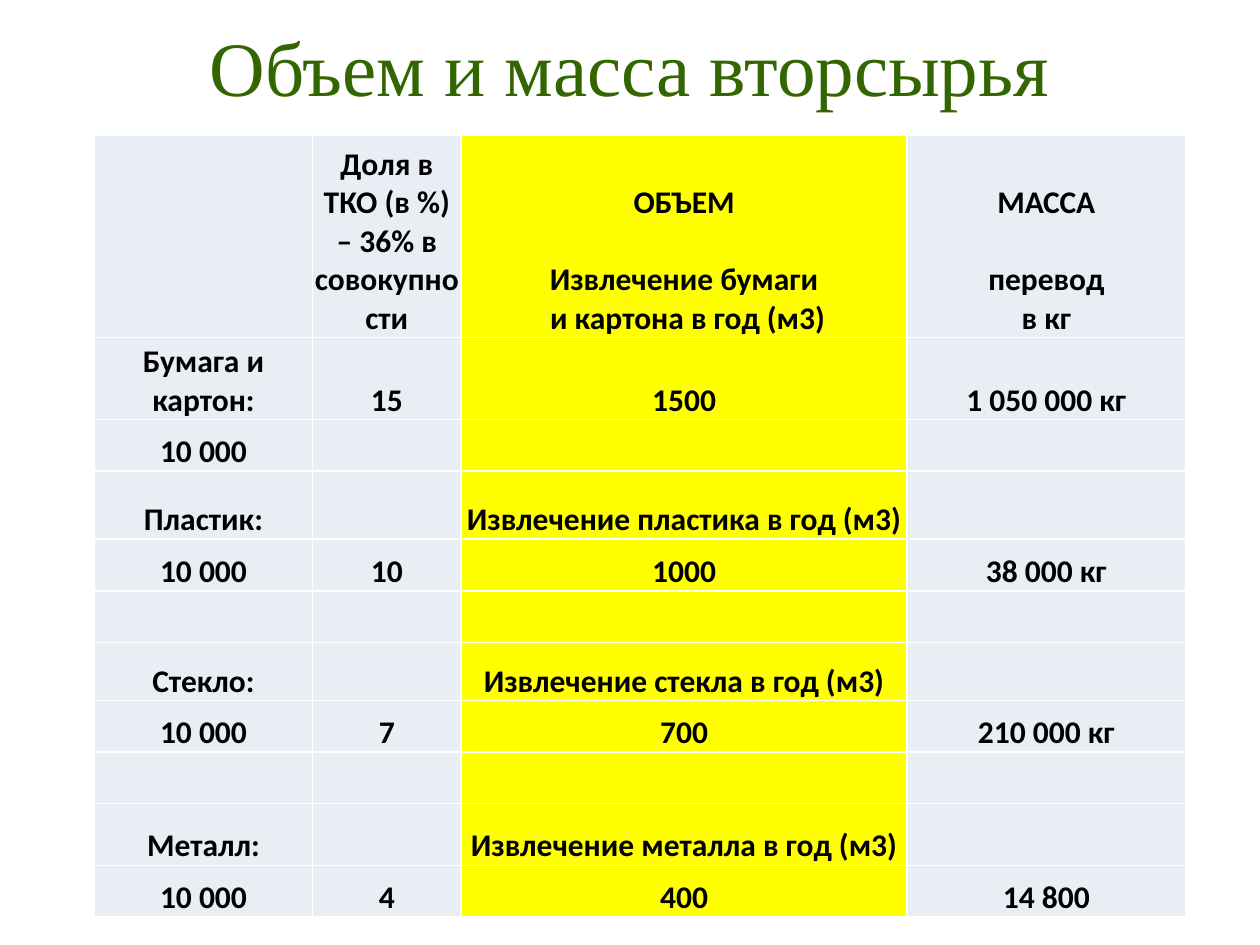
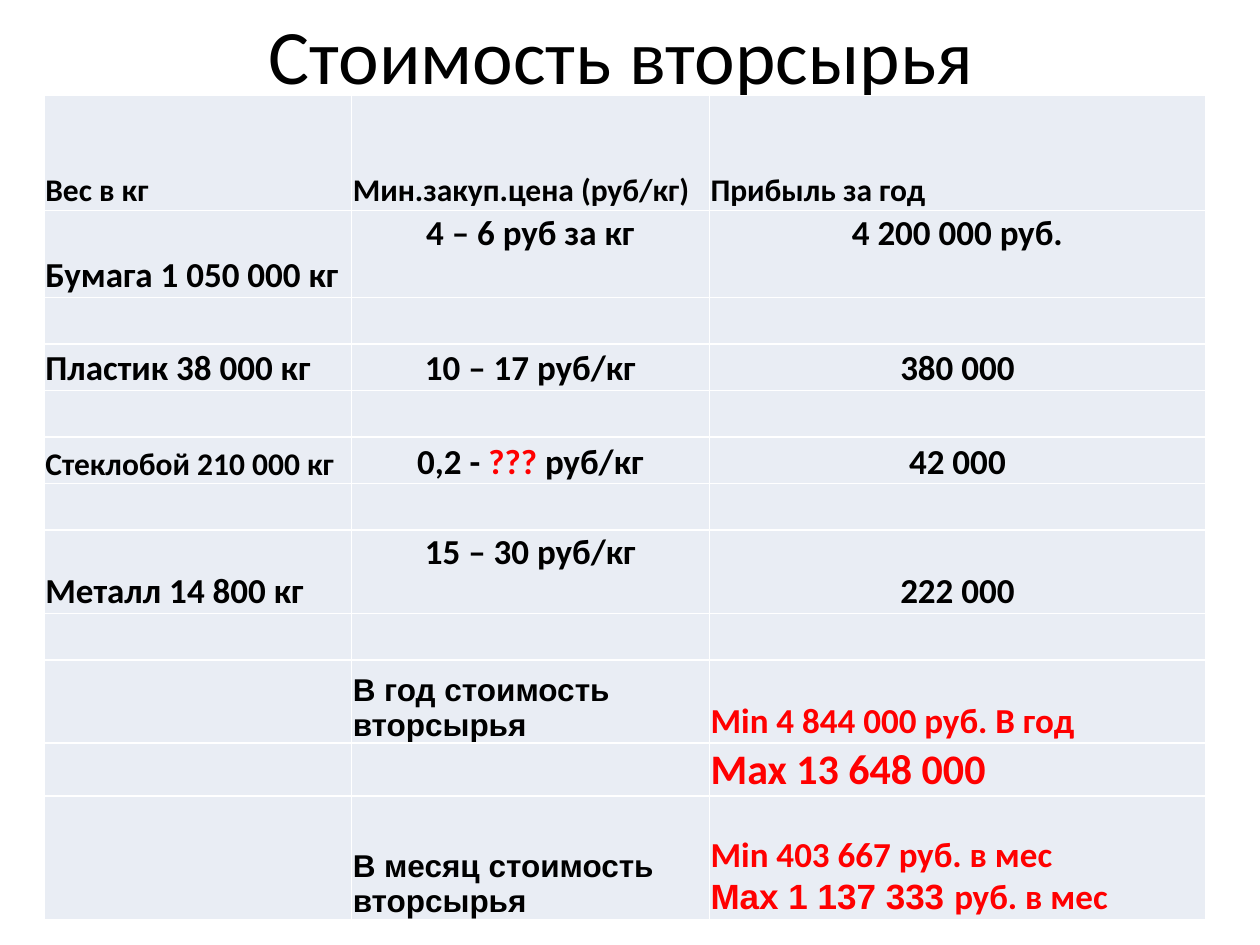
from collections import namedtuple

from pptx import Presentation
from pptx.dml.color import RGBColor
from pptx.enum.text import MSO_ANCHOR, MSO_AUTO_SIZE, PP_ALIGN
from pptx.util import Inches, Pt

BLACK = RGBColor(0x00, 0x00, 0x00)
RED = RGBColor(0xFF, 0x00, 0x00)
GREEN = RGBColor(0x33, 0x66, 0x00)
YELLOW = RGBColor(0xFF, 0xFF, 0x00)
PALE_BLUE = RGBColor(0xE9, 0xED, 0xF4)

Run = namedtuple("Run", "text size font color", defaults=(18, "Calibri", BLACK))


def add_titled_table(title_run, title_box, table_box, column_widths, row_heights):
    """Add a slide with a formatted title and an evenly filled table; return the table."""
    slide = presentation.slides.add_slide(presentation.slide_layouts[5])
    title = slide.shapes.title
    title.left, title.top, title.width, title.height = map(Inches, title_box)
    title.text_frame.word_wrap = True
    title.text_frame.auto_size = MSO_AUTO_SIZE.NONE
    title.text_frame.vertical_anchor = MSO_ANCHOR.MIDDLE
    write_runs(title.text_frame.paragraphs[0], [title_run], PP_ALIGN.CENTER, bold=False)

    table = slide.shapes.add_table(
        len(row_heights), len(column_widths), *map(Inches, table_box)
    ).table
    table.first_row = False
    table.horz_banding = False
    for column, width in zip(table.columns, column_widths):
        column.width = Inches(width)
    for row, height in zip(table.rows, row_heights):
        row.height = Inches(height)
    for cell in table.iter_cells():
        cell.fill.solid()
        cell.fill.fore_color.rgb = PALE_BLUE
        cell.vertical_anchor = MSO_ANCHOR.BOTTOM
        cell.margin_left = cell.margin_top = cell.margin_right = Inches(0.01)
        cell.margin_bottom = 0
    return table


def write_runs(paragraph, runs, alignment, bold=True):
    paragraph.alignment = alignment
    for item in runs:
        run = paragraph.add_run()
        run.text = item.text
        run.font.size = Pt(item.size)
        run.font.name = item.font
        run.font.bold = bold
        run.font.color.rgb = item.color


presentation = Presentation()
presentation.slide_width = Inches(10)
presentation.slide_height = Inches(7.5)

# Slide 1: volume and mass
volume_table = add_titled_table(
    Run("Объем и масса вторсырья", 44, "Times New Roman", GREEN),
    (0.5, 0.06, 9, 0.93),
    (0.75, 1.07, 8.66, 6.18),
    [1.73, 1.18, 3.54, 2.21],
    [1.61, 0.65, 0.41, 0.54, 0.41, 0.41, 0.46, 0.41, 0.41, 0.49, 0.41],
)
volume_rows = [
    ["", "Доля в ТКО (в %) – 36% в совокупности",
     "ОБЪЕМ\nИзвлечение бумаги\n и картона в год (м3)", "МАССА\nперевод\nв кг"],
    ["Бумага и картон:", "15", "1500", "1 050 000 кг"],
    ["10 000", "", "", ""],
    ["Пластик:", "", "Извлечение пластика в год (м3)", ""],
    ["10 000", "10", "1000", "38 000 кг"],
    ["", "", "", ""],
    ["Стекло:", "", "Извлечение стекла в год (м3)", ""],
    ["10 000", "7", "700", "210 000 кг"],
    ["", "", "", ""],
    ["Металл:", "", "Извлечение металла в год (м3)", ""],
    ["10 000", "4", "400", "14 800"],
]
for row_index, texts in enumerate(volume_rows):
    volume_table.cell(row_index, 2).fill.fore_color.rgb = YELLOW
    for column_index, text in enumerate(texts):
        frame = volume_table.cell(row_index, column_index).text_frame
        for line_index, line in enumerate(text.split("\n") if text else []):
            paragraph = frame.add_paragraph() if line_index else frame.paragraphs[0]
            write_runs(paragraph, [Run(line)], PP_ALIGN.CENTER)
for column_index in (2, 3):
    heading = volume_table.cell(0, column_index).text_frame.paragraphs[0]
    heading.space_after = Pt(22)

# Slide 2: value
value_table = add_titled_table(
    Run("Стоимость вторсырья", 44),
    (0.43, 0, 9, 0.85),
    (0.35, 0.76, 9.21, 6.55),
    [2.44, 2.84, 3.94],
    [0.91, 0.69, 0.37, 0.37, 0.37, 0.37, 0.37, 0.66, 0.37, 0.66, 0.42, 0.98],
)
# Each cell is a list of paragraphs, each paragraph a list of runs
value_rows = {
    0: [[[Run("Вес в кг")]], [[Run("Мин.закуп.цена (руб/кг)")]], [[Run("Прибыль за год")]]],
    1: [[[Run("Бумага 1 050 000 кг", 20)]], [[Run("4 – 6 руб за кг", 20)]],
        [[Run("4 200 000 руб.", 20)]]],
    3: [[[Run("Пластик 38 000 кг", 20)]], [[Run("10 – 17 руб/кг", 20)]],
        [[Run("380 000", 20)]]],
    5: [[[Run("Стеклобой 210 000 кг")]],
        [[Run("0,2 - ", 20), Run("???", 20, color=RED), Run(" руб/кг", 20)]],
        [[Run("42 000", 20)]]],
    7: [[[Run("Металл 14 800 кг", 20)]], [[Run("15 – 30 руб/кг", 20)]],
        [[Run("222 000", 20)]]],
    9: [[], [[Run("В год стоимость вторсырья", font="Arial")]],
        [[Run("Min 4 844 000 руб. В год", 20, color=RED)]]],
    10: [[], [], [[Run("Max 13 648 000", 24, color=RED)]]],
    11: [[], [[Run("В месяц стоимость вторсырья", font="Arial")]],
         [[Run("Min 403 667 руб. в мес", 20, color=RED)],
          [Run("Max 1 137 333 ", 20, "Arial", RED), Run("руб. в мес", 20, color=RED)]]],
}
for row_index, cells in value_rows.items():
    for column_index, paragraphs in enumerate(cells):
        frame = value_table.cell(row_index, column_index).text_frame
        is_price = 1 <= row_index <= 7 and column_index > 0
        alignment = PP_ALIGN.CENTER if is_price else PP_ALIGN.LEFT
        for line_index, runs in enumerate(paragraphs):
            paragraph = frame.add_paragraph() if line_index else frame.paragraphs[0]
            write_runs(paragraph, runs, alignment)
for row_index, column_index in [(1, 1), (1, 2), (7, 1)]:
    value_table.cell(row_index, column_index).vertical_anchor = MSO_ANCHOR.TOP

presentation.save("out.pptx")
